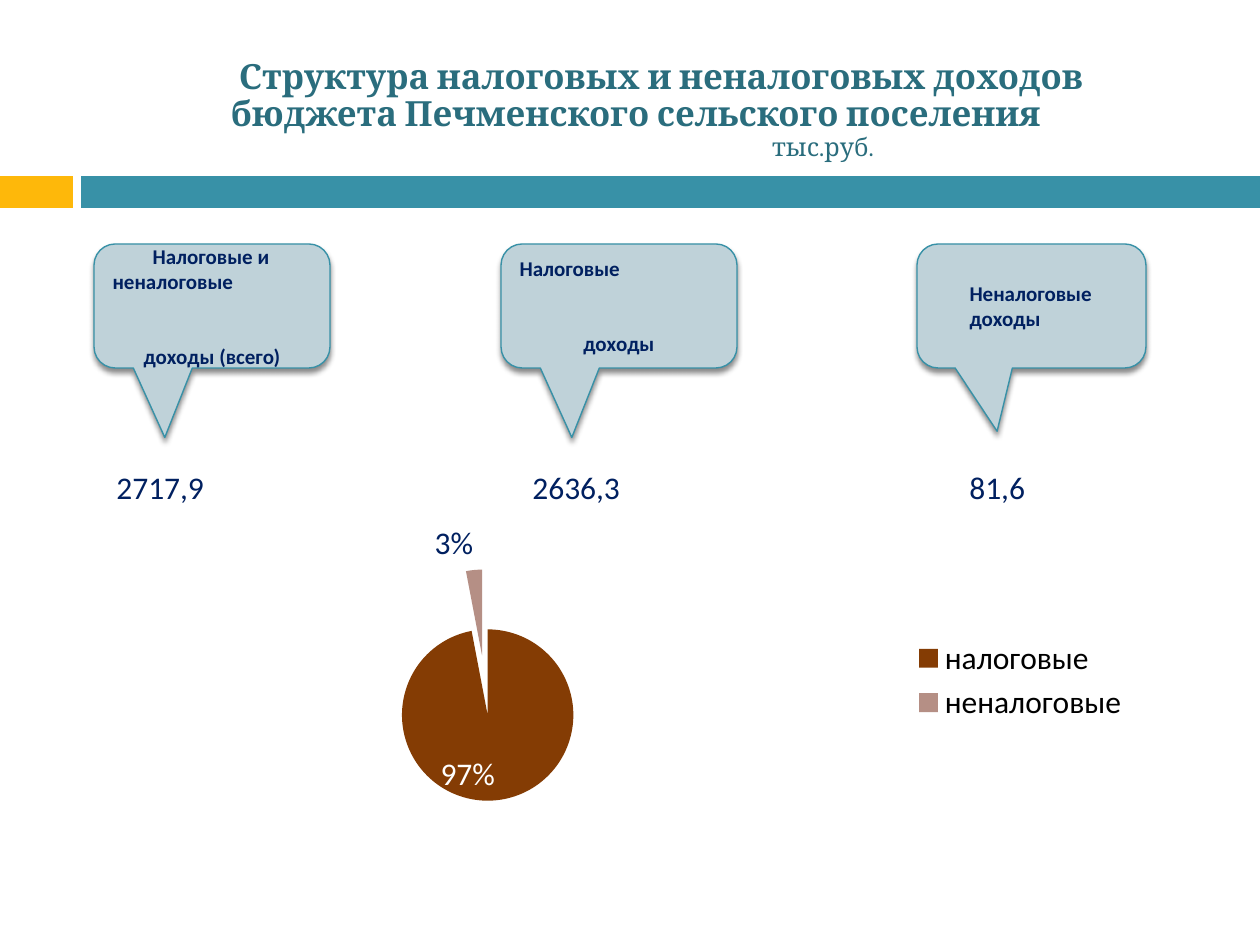
"""Build a slide on the structure of tax and non-tax revenue."""
from lxml import etree
from pptx import Presentation
from pptx.chart.data import CategoryChartData
from pptx.dml.color import RGBColor
from pptx.enum.chart import XL_CHART_TYPE, XL_LABEL_POSITION, XL_LEGEND_POSITION
from pptx.enum.shapes import MSO_SHAPE
from pptx.enum.text import MSO_ANCHOR, PP_ALIGN
from pptx.oxml import parse_xml
from pptx.oxml.ns import nsdecls, qn
from pptx.util import Pt

RECT, CALLOUT = MSO_SHAPE.RECTANGLE, MSO_SHAPE.ROUNDED_RECTANGULAR_CALLOUT
MIDDLE, TOP = MSO_ANCHOR.MIDDLE, MSO_ANCHOR.TOP
LEFT, CENTER = PP_ALIGN.LEFT, PP_ALIGN.CENTER
PIE, RIGHT = XL_CHART_TYPE.PIE, XL_LEGEND_POSITION.RIGHT
INSIDE, OUTSIDE = XL_LABEL_POSITION.INSIDE_END, XL_LABEL_POSITION.OUTSIDE_END

GOLD = RGBColor(0xFE, 0xB8, 0x0A)
TEAL = RGBColor(0x38, 0x91, 0xA7)
DEEP = RGBColor(0x2A, 0x6D, 0x7D)
PALE = RGBColor(0xBF, 0xD2, 0xD9)
NAVY = RGBColor(0x00, 0x20, 0x60)
BROWN = RGBColor(0x84, 0x3C, 0x04)
ROSE = RGBColor(0xB5, 0x8F, 0x85)
WHITE = RGBColor(0xFF, 0xFF, 0xFF)
BLACK = RGBColor(0, 0, 0)

HEAD = dict(name="Cambria", size=Pt(19.8), bold=True, color=DEEP)
UNIT = dict(name="Cambria", size=Pt(14.4), bold=False, color=DEEP)
NOTE = dict(name="Calibri", size=Pt(12), bold=True, color=NAVY)
SUM = dict(name="Calibri", size=Pt(18), bold=False, color=NAVY)
KEY = dict(SUM, color=BLACK)

BARS = [(0, 73, GOLD), (81, 1179, TEAL)]
TITLE = [
    dict(text="Структура налоговых и неналоговых доходов бюджета Печменского сельского поселения",
         form=HEAD, align=CENTER, indent=51, line=0.9),
    dict(text="тыс.руб.", form=UNIT, align=CENTER, margin=375, line=0.9),
]
CARDS = [
    dict(left=94, wide=236, tip=(-0.2, 1.06), sum="2717,9", at=104, text=[
        dict(text="Налоговые и неналоговые", indent=40, after=50),
        dict(text="доходы (всего)", align=CENTER)]),
    dict(left=501, wide=236, tip=(-0.2, 1.06), sum="2636,3", at=520, text=[
        dict(text="Налоговые", after=50),
        dict(text="доходы", align=CENTER)]),
    dict(left=917, wide=229, tip=(-0.15, 1.01), sum="81,6", at=957, text=[
        dict(text="Неналоговые доходы", margin=34)]),
]
SLICES = [
    ("налоговые", 97, BROWN, INSIDE, WHITE),
    ("неналоговые", 3, ROSE, OUTSIDE, NAVY),
]
PLOT = dict(layoutTarget="inner", xMode="edge", yMode="edge", x=0.01, y=0.21, w=0.69, h=0.73)
LEGEND = dict(xMode="edge", yMode="edge", x=0.74, y=0.41)
SHADOW = (f'<a:effectLst {nsdecls("a")}><a:outerShdw blurRad="38100" dist="30480" dir="5400000" '
          'algn="ctr" rotWithShape="0"><a:srgbClr val="000000"><a:alpha val="45000"/></a:srgbClr>'
          '</a:outerShdw></a:effectLst>')


def px(n):
    return round(n * 914400 / 126)


def style(font, form):
    for key, val in form.items():
        if key == "color":
            font.color.rgb = val
        else:
            setattr(font, key, val)


def write(frame, rows, anchor):
    frame.word_wrap = True
    frame.vertical_anchor = anchor
    for i, row in enumerate(rows):
        para = frame.add_paragraph() if i else frame.paragraphs[0]
        para.alignment = row.get("align", LEFT)
        para.space_after = px(row.get("after", 0))
        para.line_spacing = row.get("line", 1.0)
        prop = para._p.get_or_add_pPr()
        prop.set("marL", str(px(row.get("margin", 0))))
        prop.set("indent", str(px(row.get("indent", 0))))
        run = para.add_run()
        run.text = row["text"]
        style(run.font, row.get("form", NOTE))


def block(slide, kind, box, fill):
    shape = slide.shapes.add_shape(kind, *map(px, box))
    shape.shadow.inherit = False
    shape.fill.solid()
    shape.fill.fore_color.rgb = fill
    shape.line.fill.background()
    return shape


def label(slide, box, rows, anchor):
    write(slide.shapes.add_textbox(*map(px, box)).text_frame, rows, anchor)


def card(slide, item):
    shape = block(slide, CALLOUT, (item["left"], 244, item["wide"], 124), PALE)
    shape.line.color.rgb = TEAL
    shape.line.width = Pt(0.79)
    for i, val in enumerate((*item["tip"], 0.17)):
        shape.adjustments[i] = val
    prop = shape._element.spPr
    prop.replace(prop.find(qn("a:effectLst")), parse_xml(SHADOW))
    write(shape.text_frame, item["text"], MIDDLE)
    label(slide, (item["at"], 462, 139, 51), [dict(text=item["sum"], form=SUM)], TOP)


def place(node, index, vals):
    for old in node.findall(qn("c:layout")):
        node.remove(old)
    lay = parse_xml(f'<c:layout {nsdecls("c")}><c:manualLayout/></c:layout>')
    for key, val in vals.items():
        etree.SubElement(lay[0], qn(f"c:{key}")).set("val", str(val))
    node.insert(index, lay)


def pie(slide):
    data = CategoryChartData()
    data.categories = [row[0] for row in SLICES]
    data.add_series("Series 1", [row[1] for row in SLICES])
    chart = slide.shapes.add_chart(PIE, *map(px, (94, 503, 1101, 317)), data).chart
    chart.has_title = False
    style(chart.font, KEY)
    chart.has_legend = True
    chart.legend.position = RIGHT
    chart.legend.include_in_layout = False
    style(chart.legend.font, KEY)
    place(chart.legend._element, 1, LEGEND)
    plot = chart.plots[0]
    plot.vary_by_categories = True
    series = plot.series[0]
    for i, (_, val, fill, spot, tint) in enumerate(SLICES):
        point = series.points[i]
        point.format.fill.solid()
        point.format.fill.fore_color.rgb = fill
        point.format.line.fill.background()
        run = point.data_label.text_frame.paragraphs[0].add_run()
        run.text = f"{val}%"
        style(run.font, dict(SUM, color=tint))
        point.data_label.position = spot
    burst = parse_xml(f'<c:explosion {nsdecls("c")} val="35"/>')
    series._element.find(qn("c:dPt")).addprevious(burst)
    place(chart._chartSpace.chart.plotArea, 0, PLOT)


def main():
    deck = Presentation()
    deck.slide_width, deck.slide_height = px(1260), px(945)
    slide = deck.slides.add_slide(deck.slide_layouts[6])
    for left, wide, fill in BARS:
        block(slide, RECT, (left, 176, wide, 32), fill)
    label(slide, (104, 76, 1063, 69), TITLE, MIDDLE)
    pie(slide)
    for item in CARDS:
        card(slide, item)
    deck.save("out.pptx")


if __name__ == "__main__":
    main()
